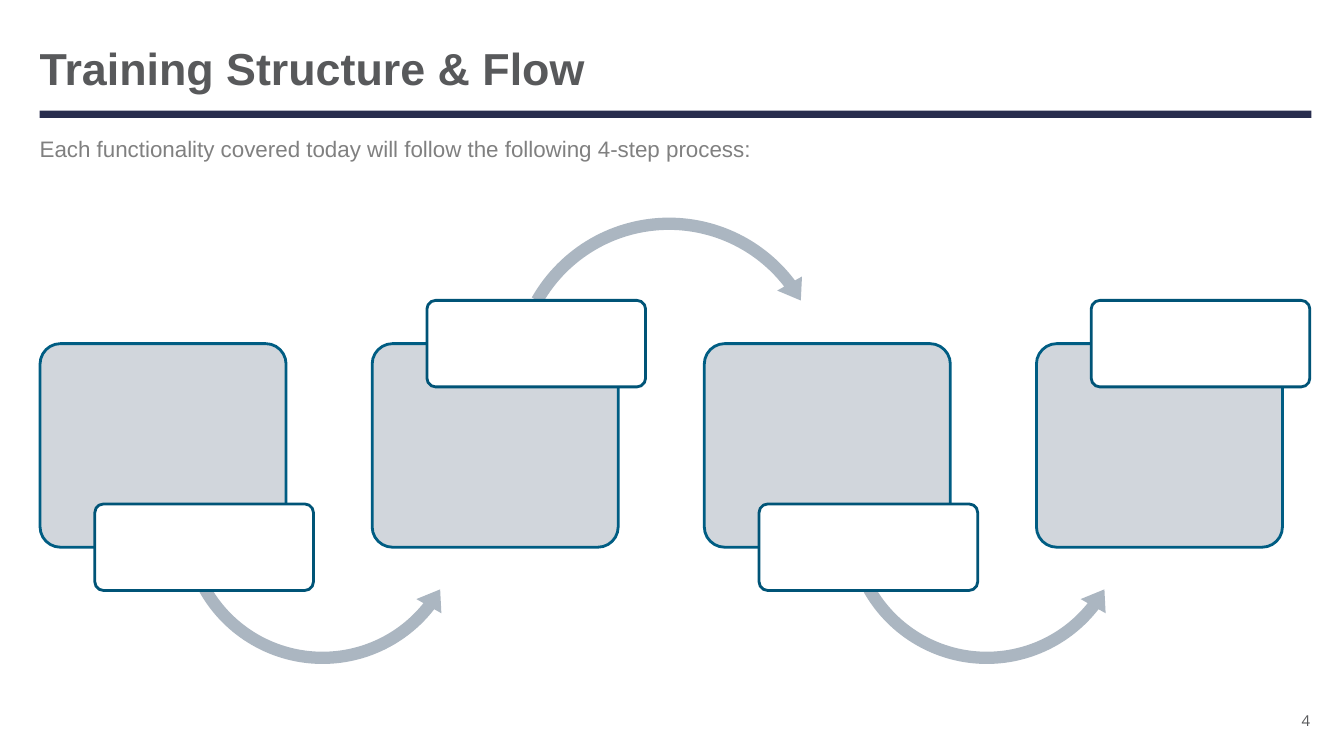
from pptx import Presentation
from pptx.dml.color import RGBColor
from pptx.enum.shapes import MSO_SHAPE as Geo
from pptx.enum.text import MSO_ANCHOR as Anchor, PP_ALIGN as Align
from pptx.oxml.ns import qn
from pptx.util import Cm, Pt
from lxml import etree

COLORS = {
    "navy": "282D4E", "title": "58595B", "body": "808080",
    "card": "CCD2D9", "edge": "005D83", "label": "FFFFFF",
    "rim": "005477", "arrow": "ABB6C1",
}
LEFT, PITCH, STEPS = 1.01, 8.37, 4
# Arrow shape, offset from its card, top, size and adjustments
LOW = (Geo.LEFT_CIRCULAR_ARROW, 3.35, 9.4, 7.54,
       (0.041, 5.142, 22.897, 90.245, 0.048))
HIGH = (Geo.CIRCULAR_ARROW, 3.3, 5.28, 8.36,
        (0.037, 4.61, 193.635, 125.755, 0.043))


class Deck:
    def __init__(self):
        self.prs = Presentation()
        self.prs.slide_width, self.prs.slide_height = Cm(33.87), Cm(19.05)
        self.slide = self.prs.slides.add_slide(self.prs.slide_layouts[6])

    def color(self, name):
        return RGBColor.from_string(COLORS[name])

    def shape(self, geo, box, fill, line=None, adj=(), alpha=None):
        """Add a preset shape; alpha is its opacity in percent."""
        item = self.slide.shapes.add_shape(geo, *map(Cm, box))
        item.shadow.inherit = False
        for i, value in enumerate(adj):
            item.adjustments[i] = value
        item.fill.solid()
        item.fill.fore_color.rgb = self.color(fill)
        if alpha:
            tint = item.fill._xPr.find(".//" + qn("a:srgbClr"))
            etree.SubElement(tint, qn("a:alpha")).set("val", str(alpha * 1000))
        if line:
            item.line.color.rgb = self.color(line)
            item.line.width = Pt(2)
        else:
            item.line.fill.background()

    def text(self, words, box, size, color, font="Arial", bold=False,
             anchor=Anchor.MIDDLE, align=Align.LEFT, space=None, before=0):
        frame = self.slide.shapes.add_textbox(*map(Cm, box)).text_frame
        frame.word_wrap = True
        frame.vertical_anchor = anchor
        frame.margin_left = frame.margin_right = 0
        para = frame.paragraphs[0]
        para.text = words
        para.alignment = align
        para.line_spacing = space
        para.space_before = Pt(before)
        para.font.name, para.font.size, para.font.bold = font, Pt(size), bold
        para.font.color.rgb = self.color(color)

    def step(self, i):
        """Add a card, the arrow to the next card and the label on top."""
        x, raised = LEFT + i * PITCH, i % 2 == 1
        self.shape(Geo.ROUNDED_RECTANGLE, (x, 8.66, 6.2, 5.13),
                   "card", "edge", (0.1,), 90)
        if i < STEPS - 1:
            geo, shift, top, size, adj = HIGH if raised else LOW
            self.shape(geo, (x + shift, top, size, size), "arrow", adj=adj)
        self.shape(Geo.ROUNDED_RECTANGLE,
                   (x + 1.38, 7.57 if raised else 12.7, 5.51, 2.18),
                   "label", "rim", (0.1,))


def main():
    deck = Deck()
    deck.shape(Geo.RECTANGLE, (1, 2.79, 32.05, 0.18), "navy")
    deck.text("Training Structure & Flow", (1, 1.04, 32.03, 1.55), 32,
              "title", bold=True, space=0.85)
    deck.text("Each functionality covered today will follow the following "
              "4-step process:", (1, 3.28, 32.03, 1.8), 16, "body",
              anchor=Anchor.TOP, before=2.7)
    for i in range(STEPS):
        deck.step(i)
    deck.text("4", (31.75, 17.58, 1.27, 1.17), 10.7, "title", "Open Sans",
              align=Align.RIGHT)
    deck.prs.save("out.pptx")


if __name__ == "__main__":
    main()
